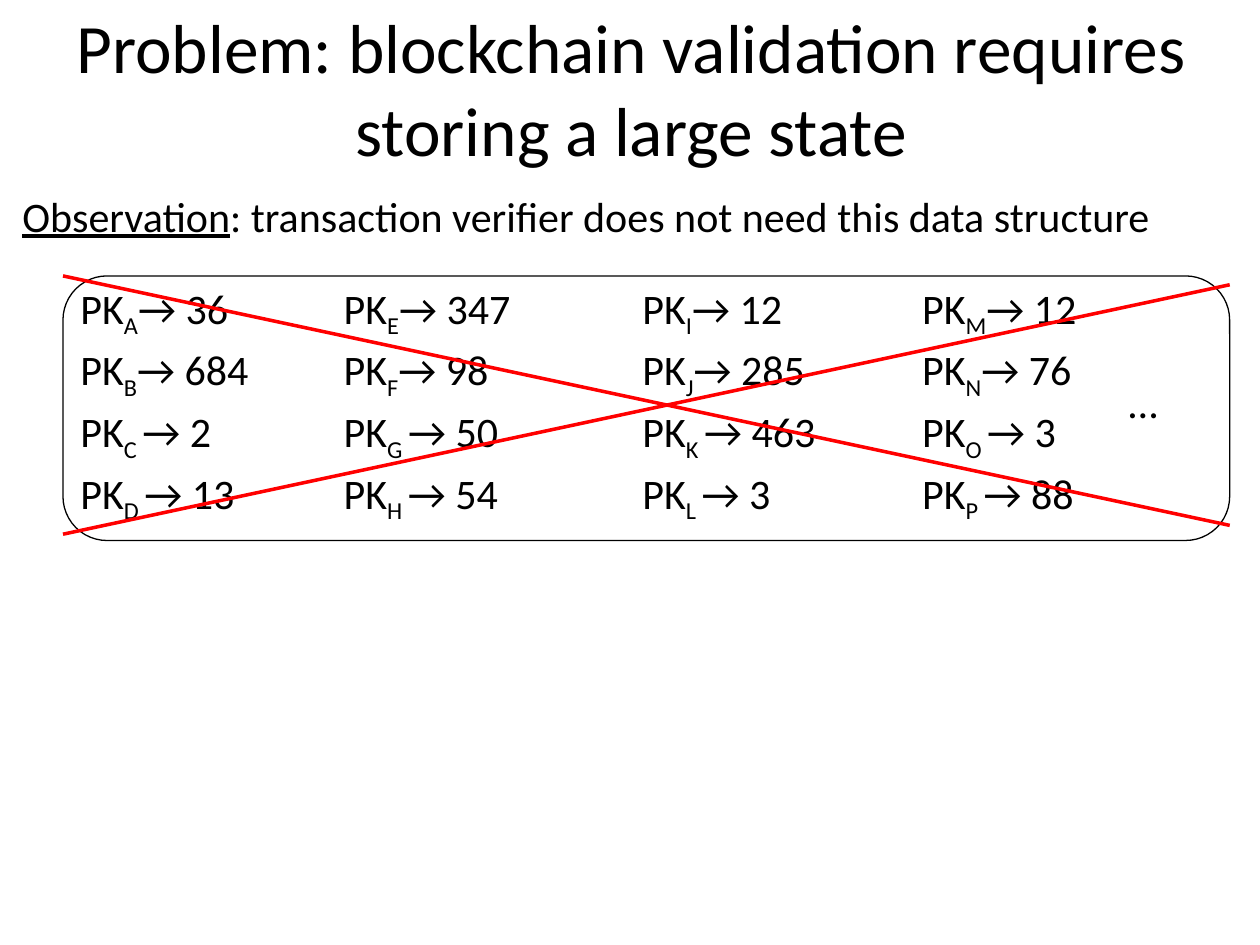
import dataclasses

import pptx
import pptx.dml.color
import pptx.enum.shapes
import pptx.enum.text
import pptx.oxml.ns
import pptx.util
from lxml import etree

Pt = pptx.util.Pt


@dataclasses.dataclass(frozen=True)
class Theme:
    font: str = "Calibri"
    ink: str = "000000"
    strike: str = "FF0000"
    title: float = 39.6
    body: float = 24
    outline: float = 0.75
    strike_width: float = 2


class Deck:
    def __init__(self, theme):
        self.theme = theme
        self.prs = pptx.Presentation()
        self.prs.slide_width, self.prs.slide_height = Pt(720), Pt(540)
        self.s = self.prs.slides.add_slide(self.prs.slide_layouts[6])

    def text(self, x, y, w, h, runs, size=None, align="LEFT", anchor="TOP"):
        sp = self.s.shapes.add_textbox(Pt(x), Pt(y), Pt(w), Pt(h))
        tf = sp.text_frame
        tf.word_wrap = True
        tf.vertical_anchor = getattr(pptx.enum.text.MSO_ANCHOR, anchor)
        p = tf.paragraphs[0]
        p.alignment = getattr(pptx.enum.text.PP_ALIGN, align)
        for words, style in runs:
            r = p.add_run()
            r.text = words
            r.font.name = self.theme.font
            r.font.size = Pt(size or self.theme.body)
            r.font.color.rgb = pptx.dml.color.RGBColor.from_string(self.theme.ink)
            if style == "underline":
                r.font.underline = True
            elif style == "subscript":
                r._r.get_or_add_rPr().set("baseline", "-25000")

    def stroke(self, sp, color, width):
        sp.line.color.rgb = pptx.dml.color.RGBColor.from_string(color)
        sp.line.width = Pt(width)

    def frame(self, x, y, w, h):
        kind = pptx.enum.shapes.MSO_SHAPE.ROUNDED_RECTANGLE
        sp = self.s.shapes.add_shape(kind, Pt(x), Pt(y), Pt(w), Pt(h))
        sp.shadow.inherit = False
        sp.fill.background()
        self.stroke(sp, self.theme.ink, self.theme.outline)

    def strike(self, x1, y1, x2, y2):
        kind = pptx.enum.shapes.MSO_CONNECTOR.STRAIGHT
        sp = self.s.shapes.add_connector(kind, Pt(x1), Pt(y1), Pt(x2), Pt(y2))
        self.stroke(sp, self.theme.strike, self.theme.strike_width)
        etree.SubElement(sp._element.spPr, pptx.oxml.ns.qn("a:effectLst"))


def main():
    theme = Theme()
    deck = Deck(theme)
    deck.text(18.72, 5.04, 684, 90,
              [("Problem: blockchain validation requires storing a large state", None)],
              theme.title, "CENTER", "MIDDLE")
    deck.text(5.76, 105.12, 714.24, 36,
              [("Observation", "underline"),
               (": transaction verifier does not need this data structure", None)])

    left, top, right = 36, 157.68, 702.72
    row_height = 35.28
    columns = [
        (38.88, "ABCD", (36, 684, 2, 13)),
        (189.36, "EFGH", (347, 98, 50, 54)),
        (360, "IJKL", (12, 285, 463, 3)),
        (519.84, "MNOP", (12, 76, 3, 88)),
    ]
    for x, keys, balances in columns:
        for row, (key, balance) in enumerate(zip(keys, balances)):
            gap = " " if row >= 2 else ""
            deck.text(x, top + row * row_height, 118.08, 36,
                      [("PK", None), (key + gap, "subscript"), (f"→ {balance}", None)])

    deck.frame(left, top, right - left, 151.2)
    deck.strike(left, top, right, 300.24)
    deck.strike(left, 305.28, right, 162.72)
    deck.text(637.92, 211.68, 40.32, 36, [("…", None)])
    deck.prs.save("out.pptx")


if __name__ == "__main__":
    main()
